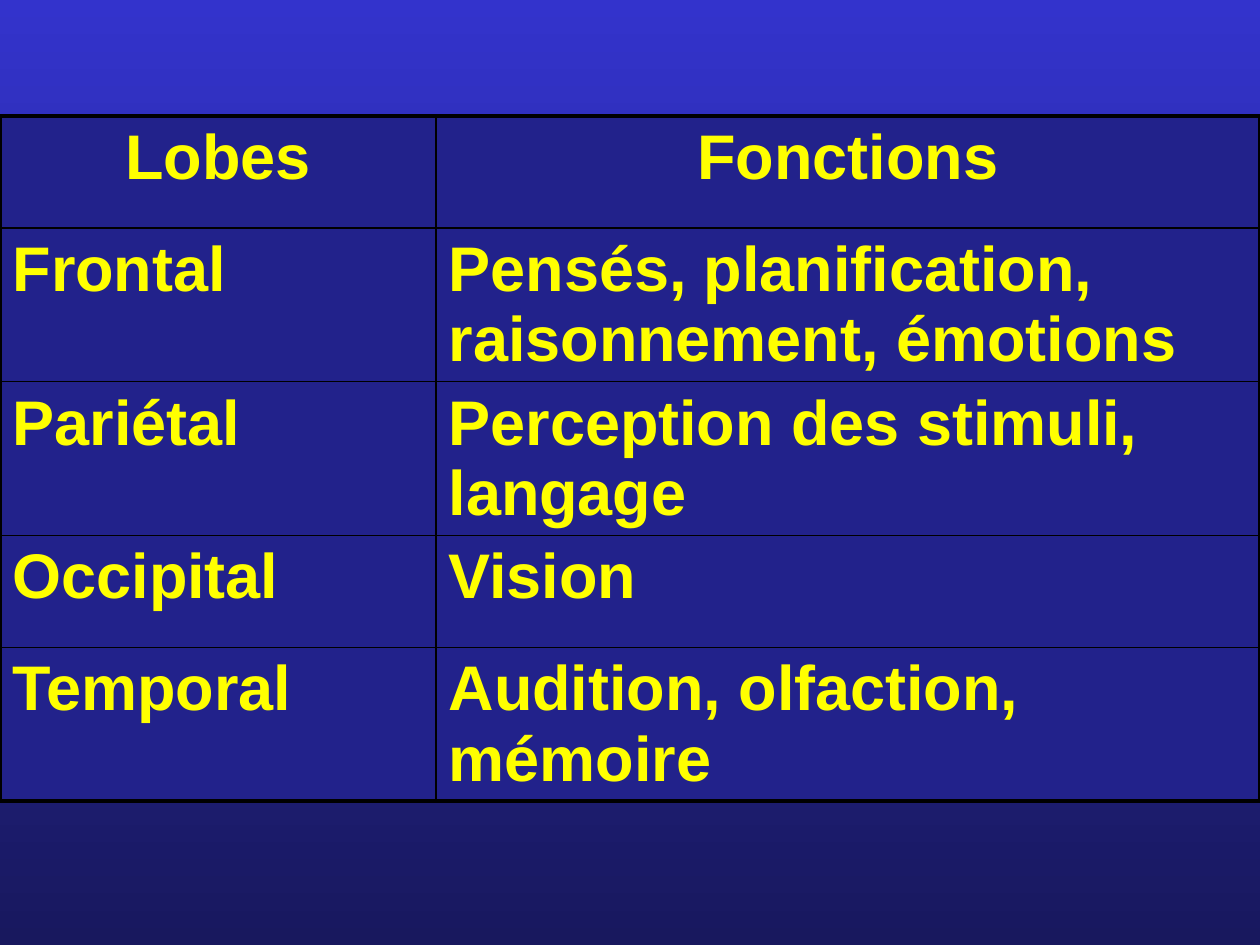
from lxml import etree
from pptx import Presentation
from pptx.dml.color import RGBColor
from pptx.enum.text import PP_ALIGN
from pptx.oxml.ns import qn
from pptx.util import Emu, Pt

PX = 914400 // 126
CENTER, LEFT = PP_ALIGN.CENTER, PP_ALIGN.LEFT
FONT = {"name": "Arial", "size": Pt(36), "bold": True}
TEXT, FILL, LINE = "FFFF00", "22228B", "000000"
THICK, THIN = Pt(2.25), Pt(1)
ROWS = [
    ("Lobes", "Fonctions"),
    ("Frontal", "Pensés, planification, raisonnement, émotions"),
    ("Pariétal", "Perception des stimuli, langage"),
    ("Occipital", "Vision"),
    ("Temporal", "Audition, olfaction, mémoire"),
]


def px(n):
    return Emu(n * PX)


def color(code):
    return RGBColor.from_string(code)


def paint_back(slide):
    fill = slide.background.fill
    fill.gradient()
    fill.gradient_angle = 270
    for stop, pos, code in zip(fill.gradient_stops, (0, 1), ("3333CC", "18185E")):
        stop.position = pos
        stop.color.rgb = color(code)


def add_edge(cell, side, width):
    line = etree.SubElement(cell._tc.get_or_add_tcPr(), qn("a:ln" + side), w=str(width))
    solid = etree.SubElement(line, qn("a:solidFill"))
    etree.SubElement(solid, qn("a:srgbClr"), val=LINE)


def fill_cell(cell, text, align, edges):
    # Borders come before the fill in the cell's properties
    for side, outer in edges.items():
        add_edge(cell, side, THICK if outer else THIN)
    cell.fill.solid()
    cell.fill.fore_color.rgb = color(FILL)

    para = cell.text_frame.paragraphs[0]
    para.alignment = align
    space = etree.SubElement(para._p.get_or_add_pPr(), qn("a:spcBef"))
    etree.SubElement(space, qn("a:spcPct"), val="20000")
    run = para.add_run()
    run.text = text
    for key, value in FONT.items():
        setattr(run.font, key, value)
    run.font.color.rgb = color(TEXT)


def add_grid(slide, left, top, width, height):
    first, row_high = 436, 112
    frame = slide.shapes.add_table(len(ROWS), 2, px(left), px(top), px(width), px(height))
    table = frame.table
    for col, wide in zip(table.columns, (first, width - first)):
        col.width = px(wide)
    # Rows with two lines of text grow from the shared minimum height
    for row in table.rows:
        row.height = px(row_high)
    frame.height = px(height)

    last = len(ROWS) - 1
    for r, texts in enumerate(ROWS):
        for c, text in enumerate(texts):
            edges = {"L": c == 0, "R": c == 1, "T": r == 0, "B": r == last}
            fill_cell(table.cell(r, c), text, LEFT if r else CENTER, edges)


def main():
    deck = Presentation()
    deck.slide_width, deck.slide_height = px(1260), px(945)
    slide = deck.slides.add_slide(deck.slide_layouts[6])
    paint_back(slide)
    add_grid(slide, 0, 116, 1260, 716)
    deck.save("out.pptx")


if __name__ == "__main__":
    main()
